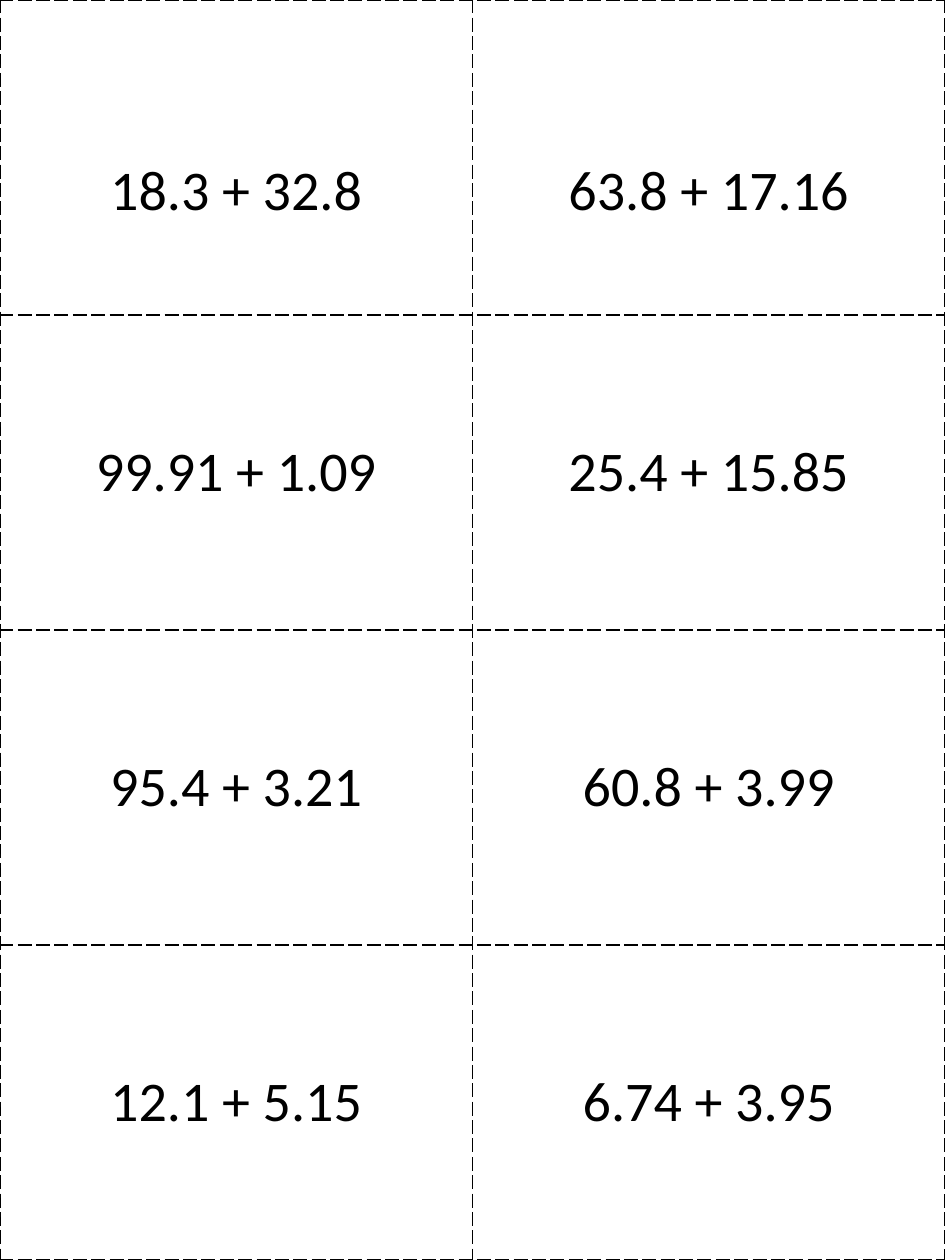
from lxml import etree
from pptx import Presentation
from pptx.dml.color import RGBColor
from pptx.enum.text import MSO_ANCHOR, PP_ALIGN
from pptx.oxml.ns import qn
from pptx.util import Inches, Pt

MIDDLE = MSO_ANCHOR.MIDDLE
CENTER = PP_ALIGN.CENTER
COLORS = {"ink": "000000", "paper": "FFFFFF"}
BORDER_WIDTH = Pt(1)
FIRST_ROW_DROP = Inches(0.54)

SUMS = [
    ["18.3 + 32.8", "63.8 + 17.16"],
    ["99.91 + 1.09", "25.4 + 15.85"],
    ["95.4 + 3.21", "60.8 + 3.99"],
    ["12.1 + 5.15", "6.74 + 3.95"],
]


def add_dashed_borders(cell):
    properties = cell._tc.get_or_add_tcPr()
    for side in ("lnL", "lnR", "lnT", "lnB"):
        line = etree.SubElement(properties, qn(f"a:{side}"), w=str(BORDER_WIDTH))
        fill = etree.SubElement(line, qn("a:solidFill"))
        etree.SubElement(fill, qn("a:srgbClr"), val=COLORS["ink"])
        etree.SubElement(line, qn("a:prstDash"), val="lgDash")


deck = Presentation()
deck.slide_width = Inches(7.5)
deck.slide_height = Inches(10)
page = deck.slides.add_slide(deck.slide_layouts[6])

cards = page.shapes.add_table(
    len(SUMS), len(SUMS[0]), 0, 0, deck.slide_width, deck.slide_height
).table
cards.first_row = False
cards.horz_banding = False

for row, row_sums in enumerate(SUMS):
    for column, sum_text in enumerate(row_sums):
        cell = cards.cell(row, column)
        add_dashed_borders(cell)
        cell.fill.solid()
        cell.fill.fore_color.rgb = RGBColor.from_string(COLORS["paper"])
        cell.vertical_anchor = MIDDLE
        if row == 0:
            cell.margin_top = Inches(0.05) + FIRST_ROW_DROP
        para = cell.text_frame.paragraphs[0]
        para.text = sum_text
        para.alignment = CENTER
        para.font.name = "Calibri"
        para.font.size = Pt(32)
        para.font.color.rgb = RGBColor.from_string(COLORS["ink"])

deck.save("out.pptx")
